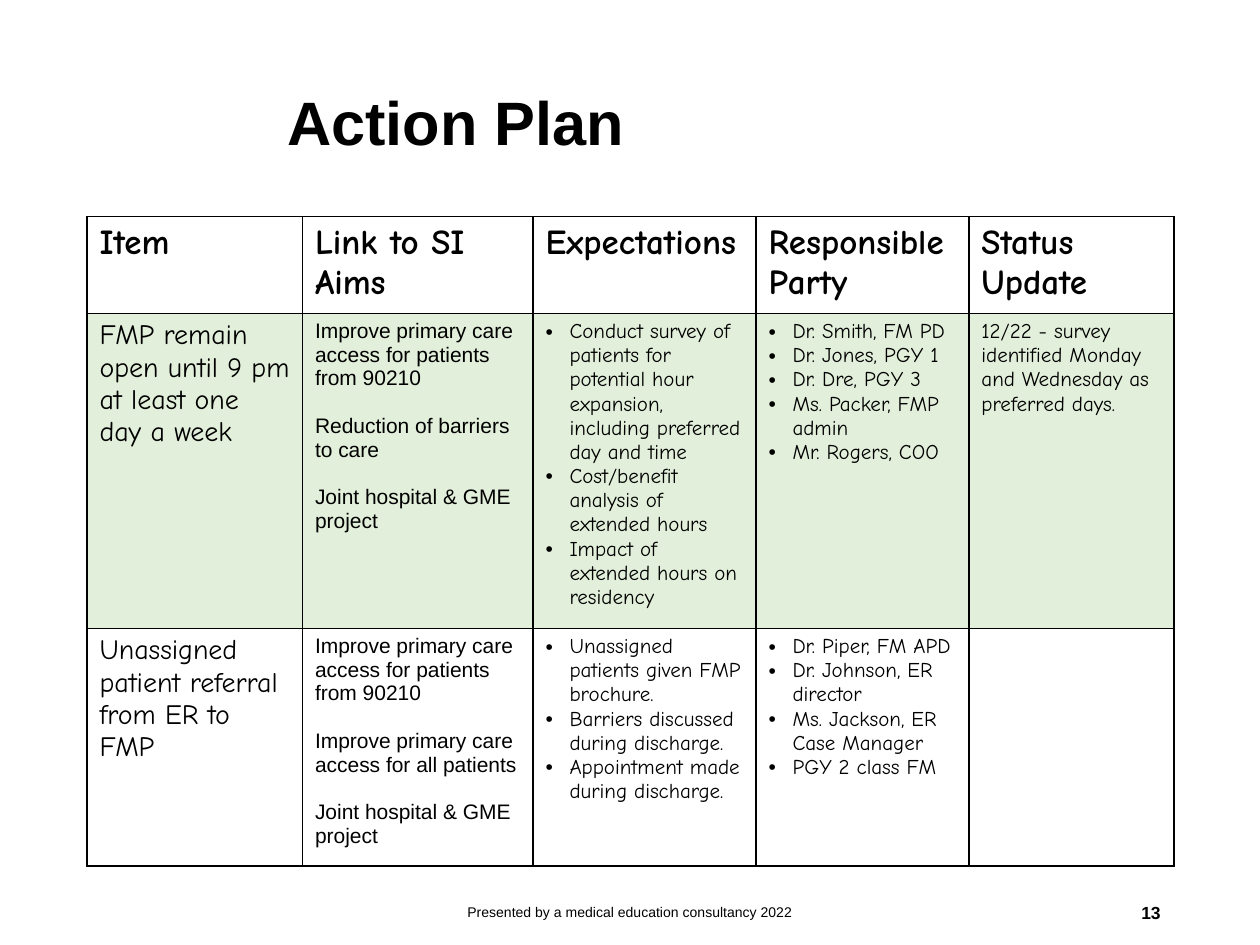
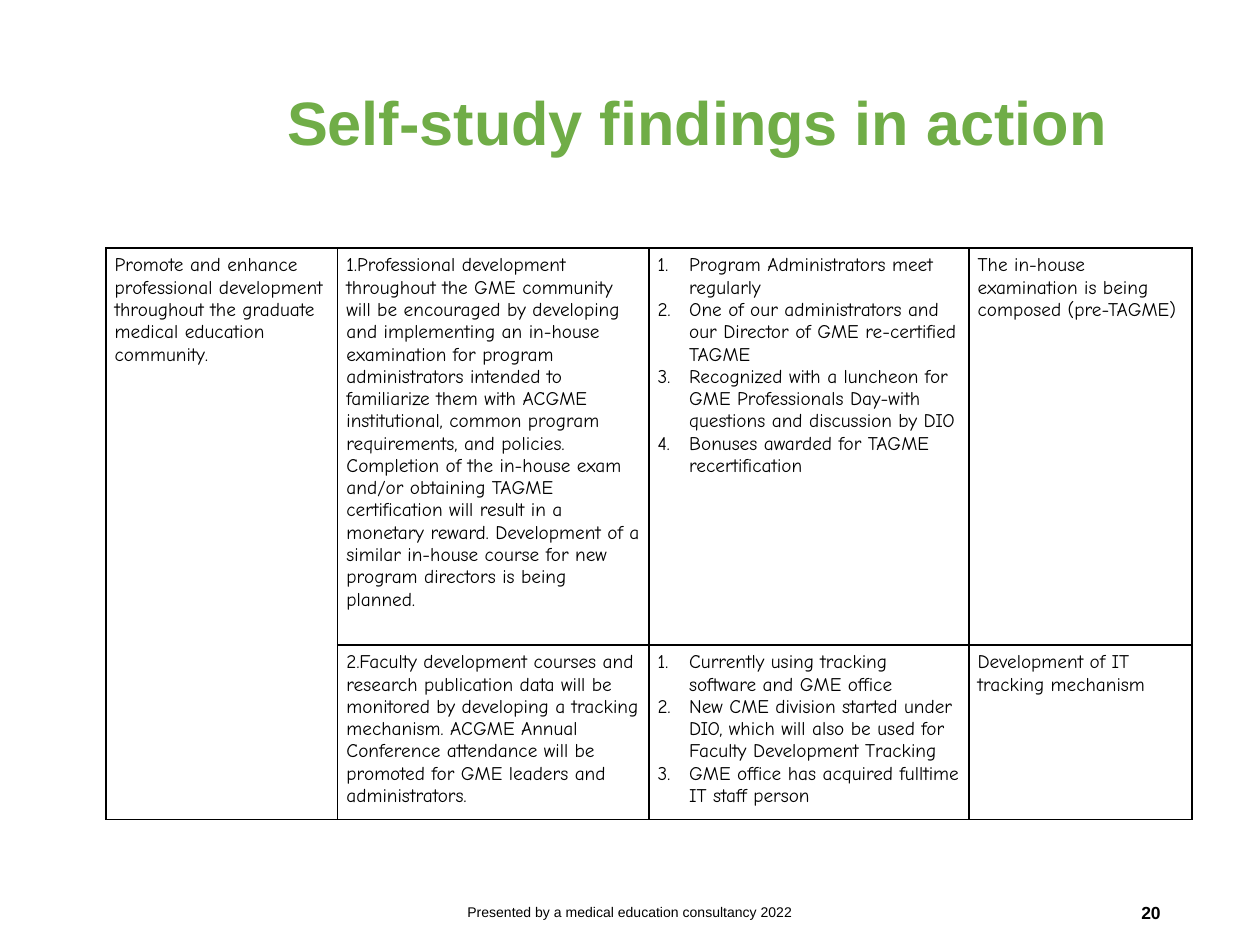
from dataclasses import dataclass

from lxml.etree import SubElement
from pptx import Presentation
from pptx.dml.color import RGBColor
from pptx.enum.text import MSO_ANCHOR, PP_ALIGN
from pptx.oxml.ns import qn
from pptx.util import Inches, Pt


@dataclass(frozen=True)
class Theme:
    black: RGBColor = RGBColor(0x00, 0x00, 0x00)
    white: RGBColor = RGBColor(0xFF, 0xFF, 0xFF)
    green: RGBColor = RGBColor(0x70, 0xAD, 0x47)
    pale_green: RGBColor = RGBColor(0xE2, 0xEF, 0xDA)
    plain_font: str = "Arial"
    table_font: str = "Comic Neue"
    title_size: int = 35
    heading_size: int = 20
    item_size: int = 16
    body_size: int = 12
    findings_size: int = 11
    number_size: int = 10
    footer_size: int = 8


@dataclass(frozen=True)
class CellStyle:
    size: int
    font: str = "Comic Neue"
    bold: bool = False
    bullet: str = ""
    indent: float = 0
    gap: float = 0
    margin: float = 0.1


theme = Theme()

heading = CellStyle(theme.heading_size, bold=True)
plan_styles = [
    CellStyle(theme.item_size),
    CellStyle(theme.body_size, font=theme.plain_font, gap=13.8),
    CellStyle(theme.body_size, bullet="•", indent=0.19),
    CellStyle(theme.body_size, bullet="•", indent=0.19),
    CellStyle(theme.body_size),
]
findings_text = CellStyle(theme.findings_size, margin=0.07)
findings_aim = CellStyle(theme.findings_size, bullet="number", margin=0.07)
findings_list = CellStyle(theme.findings_size, bullet="number", indent=0.25, margin=0.07)
findings_styles = [findings_text, findings_aim, findings_list, findings_text]

plan_rows = [
    [["Item"], ["Link to SI Aims"], ["Expectations"], ["Responsible Party"], ["Status Update"]],
    [
        ["FMP remain open until 9 pm at least one day a week"],
        [
            "Improve primary care access for patients from 90210",
            "Reduction of barriers to care",
            "Joint hospital & GME project",
        ],
        [
            "Conduct survey of patients for potential hour expansion, "
            "including preferred day and time",
            "Cost/benefit analysis of extended hours",
            "Impact of extended hours on residency",
        ],
        [
            "Dr. Smith, FM PD",
            "Dr. Jones, PGY 1",
            "Dr. Dre, PGY 3",
            "Ms. Packer, FMP admin",
            "Mr. Rogers, COO",
        ],
        ["12/22 - survey identified Monday and Wednesday as preferred days."],
    ],
    [
        ["Unassigned patient referral from ER to FMP"],
        [
            "Improve primary care access for patients from 90210",
            "Improve primary care access for all patients",
            "Joint hospital & GME project",
        ],
        [
            "Unassigned patients given FMP brochure.",
            "Barriers discussed during discharge.",
            "Appointment made during discharge.",
        ],
        [
            "Dr. Piper, FM APD",
            "Dr. Johnson, ER director",
            "Ms. Jackson, ER Case Manager",
            "PGY 2 class FM",
        ],
        [],
    ],
]

findings_rows = [
    [
        [
            "Promote and enhance professional development throughout the "
            "graduate medical education community."
        ],
        [
            "Professional development throughout the GME community will be encouraged by "
            "developing and implementing an in-house examination for program administrators "
            "intended to familiarize them with ACGME institutional, common program "
            "requirements, and policies. Completion of the in-house exam and/or obtaining "
            "TAGME certification will result in a monetary reward. Development of a similar "
            "in-house course for new program directors is being planned."
        ],
        [
            "Program Administrators meet regularly",
            "One of our administrators and our Director of GME re-certified TAGME",
            "Recognized with a luncheon for GME Professionals Day-with questions "
            "and discussion by DIO",
            "Bonuses awarded for TAGME recertification",
        ],
        ["The in-house examination is being composed (pre-TAGME)"],
    ],
    [
        [],
        [
            "Faculty development courses and research publication data will be monitored by "
            "developing a tracking mechanism. ACGME Annual Conference attendance will be "
            "promoted for GME leaders and administrators."
        ],
        [
            "Currently using tracking software and GME office",
            "New CME division started under DIO, which will also be used for "
            "Faculty Development Tracking",
            "GME office has acquired fulltime IT staff person",
        ],
        ["Development of IT tracking mechanism"],
    ],
]

slides = [
    {
        "title": "Action Plan",
        "title_color": theme.black,
        "number": "13",
        "position": (0.69, 1.72),
        "columns": [1.71, 1.83, 1.77, 1.69, 1.63],
        "heights": [0.74, 2.4, 1.84],
        "rows": plan_rows,
        "styles": [[heading] * 5, plan_styles, plan_styles],
        "fills": [theme.white, theme.pale_green, theme.white],
        "merge": None,
    },
    {
        "title": "Self-study findings in action",
        "title_color": theme.green,
        "number": "20",
        "position": (0.84, 1.97),
        "columns": [1.84, 2.47, 2.54, 1.77],
        "heights": [3.15, 1.34],
        "rows": findings_rows,
        "styles": [findings_styles] * 2,
        "fills": [theme.white] * 2,
        "merge": ((0, 0), (1, 0)),
    },
]


def add_label(slide, box, text, size, color=theme.black, bold=False, align=PP_ALIGN.LEFT):
    shape = slide.shapes.add_textbox(*(Inches(length) for length in box))
    frame = shape.text_frame
    frame.word_wrap = True
    frame.vertical_anchor = MSO_ANCHOR.MIDDLE
    paragraph = frame.paragraphs[0]
    paragraph.alignment = align
    run = paragraph.add_run()
    run.text = text
    run.font.name = theme.plain_font
    run.font.size = Pt(size)
    run.font.bold = bold
    run.font.color.rgb = color
    return paragraph


def fill_cell(cell, texts, style, color, first_number):
    """Draw the cell's borders and fill, then write one paragraph per text."""
    properties = cell._tc.get_or_add_tcPr()
    for side in ("a:lnL", "a:lnR", "a:lnT", "a:lnB"):
        line = SubElement(properties, qn(side), w=str(Pt(1)))
        line_fill = SubElement(line, qn("a:solidFill"))
        SubElement(line_fill, qn("a:srgbClr"), val=str(theme.black))
    cell.fill.solid()
    cell.fill.fore_color.rgb = color
    cell.margin_left = cell.margin_right = Inches(style.margin)
    cell.margin_top = cell.margin_bottom = Inches(0.05)

    frame = cell.text_frame
    for index, text in enumerate(texts):
        paragraph = frame.add_paragraph() if index else frame.paragraphs[0]
        if style.bullet:
            layout = paragraph._p.get_or_add_pPr()
            layout.set("marL", str(Inches(style.indent)))
            layout.set("indent", str(-Inches(style.indent)))
            if style.bullet == "number":
                SubElement(layout, qn("a:buAutoNum"), type="arabicPeriod", startAt=str(first_number))
            else:
                SubElement(layout, qn("a:buFont"), typeface=theme.plain_font)
                SubElement(layout, qn("a:buChar"), char=style.bullet)
        if index and style.gap:
            paragraph.space_before = Pt(style.gap)
        run = paragraph.add_run()
        run.text = text
        run.font.name = style.font
        run.font.size = Pt(style.size)
        run.font.bold = style.bold
        run.font.color.rgb = theme.black


presentation = Presentation()
presentation.slide_width = Inches(10)
presentation.slide_height = Inches(7.5)

for content in slides:
    slide = presentation.slides.add_slide(presentation.slide_layouts[6])

    title = add_label(slide, (2.18, 0.27, 7.14, 1.45), content["title"],
                      theme.title_size, content["title_color"], bold=True)
    title.line_spacing = 0.9

    left, top = content["position"]
    columns, heights = content["columns"], content["heights"]
    table = slide.shapes.add_table(
        len(heights), len(columns), Inches(left), Inches(top),
        Inches(sum(columns)), Inches(sum(heights)),
    ).table
    table.first_row = False
    table.horz_banding = False
    for column, width in zip(table.columns, columns):
        column.width = Inches(width)
    for row, height in zip(table.rows, heights):
        row.height = Inches(height)

    for row_index, row_texts in enumerate(content["rows"]):
        for column_index, texts in enumerate(row_texts):
            style = content["styles"][row_index][column_index]
            first_number = row_index + 1 if style is findings_aim else 1
            fill_cell(table.cell(row_index, column_index), texts, style,
                      content["fills"][row_index], first_number)
    if content["merge"]:
        start, end = content["merge"]
        table.cell(*start).merge(table.cell(*end))

    add_label(slide, (7.06, 7.04, 2.25, 0.4), content["number"],
              theme.number_size, bold=True, align=PP_ALIGN.RIGHT)
    add_label(slide, (3.31, 7.04, 3.38, 0.4),
              "Presented by a medical education consultancy 2022",
              theme.footer_size, align=PP_ALIGN.CENTER)

presentation.save("out.pptx")
